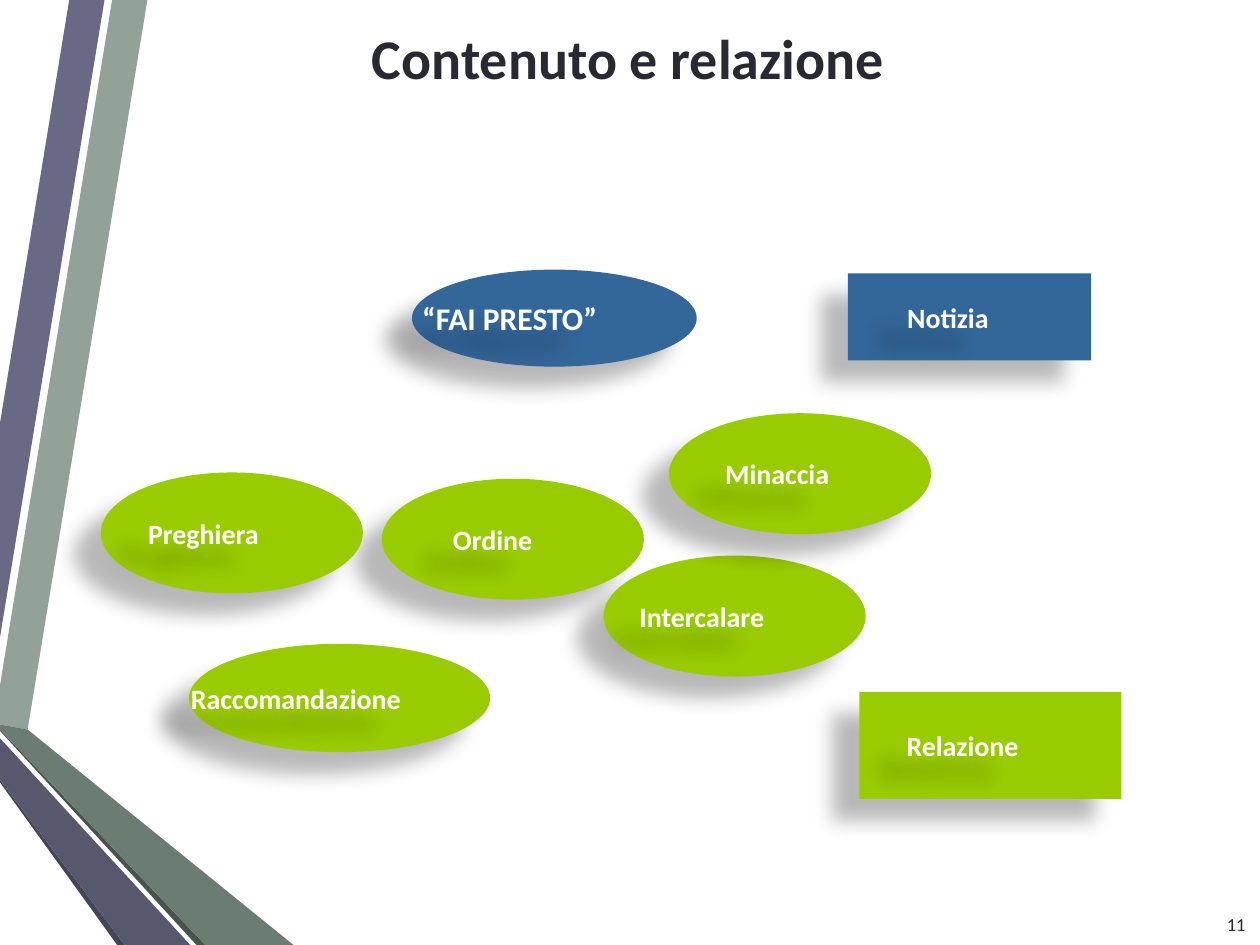
"""Builds the slide on content and relationship in communication."""
from lxml.etree import SubElement
from pptx import Presentation
from pptx.dml.color import RGBColor
from pptx.enum.shapes import MSO_SHAPE as Shape
from pptx.enum.text import MSO_ANCHOR as Anchor, MSO_AUTO_SIZE as AutoSize, PP_ALIGN as Align
from pptx.oxml.ns import qn
from pptx.util import Inches, Pt

TITLE = "Contenuto e relazione"
PAGE_NUMBER = "11"
FONT, INK, WHITE, BLUE, GREEN = "Calibri", "292934", "FFFFFF", "336699", "99CC00"

RIBBONS = [
    ("93A299", [(0, 5.44), (0, 5.75), (0.22, 5.79), (1.17, 0), (0.89, 0)]),
    ("696986", [(0.83, 0), (0.55, 0), (0, 3.36), (0, 5.06)]),
    ("454557", [(0, 6.19), (0, 6.21), (0.93, 7.5), (0.99, 7.5)]),
    ("47534C", [(0, 5.79), (0, 5.8), (1.56, 7.5), (1.63, 7.5)]),
    ("6B7D72", [(0, 5.79), (1.63, 7.5), (2.33, 7.5), (0.22, 5.79), (0, 5.75)]),
    ("57576E", [(0, 6.19), (0.99, 7.5), (1.51, 7.5), (0, 5.86)]),
]

BUBBLES = [
    ("“FAI PRESTO”", 18, Shape.OVAL, BLUE, (3.27, 2.14, 2.26, 0.77), 2.1),
    ("Notizia", 16, Shape.RECTANGLE, BLUE, (6.73, 2.17, 1.93, 0.69), 0.99),
    ("Relazione", 16, Shape.RECTANGLE, GREEN, (6.82, 5.49, 2.08, 0.85), 1.33),
    ("Ordine", 16, Shape.OVAL, GREEN, (3.03, 3.8, 2.08, 0.96), 0.95),
    ("Preghiera", 16, Shape.OVAL, GREEN, (0.8, 3.75, 2.08, 0.96), 1.33),
    ("Intercalare", 16, Shape.OVAL, GREEN, (4.79, 4.41, 2.08, 0.96), 1.51),
    ("Raccomandazione", 16, Shape.OVAL, GREEN, (1.5, 5.11, 2.39, 0.86), 2.36),
    ("Minaccia", 16, Shape.OVAL, GREEN, (5.31, 3.28, 2.08, 0.96), 1.19),
]


def color(value):
    return RGBColor.from_string(value)


def paint(shape, value):
    shape.shadow.inherit = False
    shape.fill.solid()
    shape.fill.fore_color.rgb = color(value)
    shape.line.fill.background()


def cast_shadow(shape):
    shape.shadow.inherit = False
    effects = shape._element.spPr.find(qn("a:effectLst"))
    shadow = SubElement(effects, qn("a:outerShdw"), blurRad=str(Pt(11.8)),
                        dist=str(Pt(19.7)), dir=str(141 * 60000),
                        algn="ctr", rotWithShape="0")
    black = SubElement(shadow, qn("a:srgbClr"), val="000000")
    SubElement(black, qn("a:alpha"), val="28000")


def write(box, text, size, value, bold, align, anchor, inset=None):
    frame = box.text_frame
    frame.word_wrap = True
    frame.auto_size = AutoSize.NONE
    frame.vertical_anchor = anchor
    if inset is not None:
        frame.margin_left = frame.margin_right = Inches(inset)
        frame.margin_top = frame.margin_bottom = Inches(inset)
    para = frame.paragraphs[0]
    para.alignment = align
    span = para.add_run()
    span.text = text
    span.font.name, span.font.size, span.font.bold = FONT, Pt(size), bold
    span.font.color.rgb = color(value)


def add_ribbon(page, value, points):
    corners = [(Inches(x), Inches(y)) for x, y in points]
    builder = page.shapes.build_freeform(*corners[0])
    builder.add_line_segments(corners[1:], close=True)
    paint(builder.convert_to_shape(), value)


def add_bubble(page, text, size, kind, value, place, label_width):
    left, top, width, height = place
    bubble = page.shapes.add_shape(kind, *map(Inches, place))
    paint(bubble, value)
    cast_shadow(bubble)
    label_height = 0.41 if size == 18 else 0.36
    label = page.shapes.add_textbox(
        Inches(left + (width - label_width) / 2), Inches(top + (height - label_height) / 2),
        Inches(label_width), Inches(label_height))
    write(label, text, size, WHITE, True, Align.LEFT, Anchor.MIDDLE, 0)
    cast_shadow(label)


def main():
    deck = Presentation()
    deck.slide_width, deck.slide_height = Inches(10), Inches(7.5)
    page = deck.slides.add_slide(deck.slide_layouts[5])
    for ribbon in RIBBONS:
        add_ribbon(page, *ribbon)
    for bubble in BUBBLES:
        add_bubble(page, *bubble)
    title = page.shapes.title
    title.left, title.top, title.width, title.height = map(Inches, (1.27, 0.14, 7.43, 0.64))
    write(title, TITLE, 32, INK, True, Align.CENTER, Anchor.TOP)
    number = page.shapes.add_textbox(*map(Inches, (9.62, 7.17, 0.38, 0.33)))
    write(number, PAGE_NUMBER, 10.5, INK, False, Align.CENTER, Anchor.MIDDLE)
    deck.save("out.pptx")


if __name__ == "__main__":
    main()
